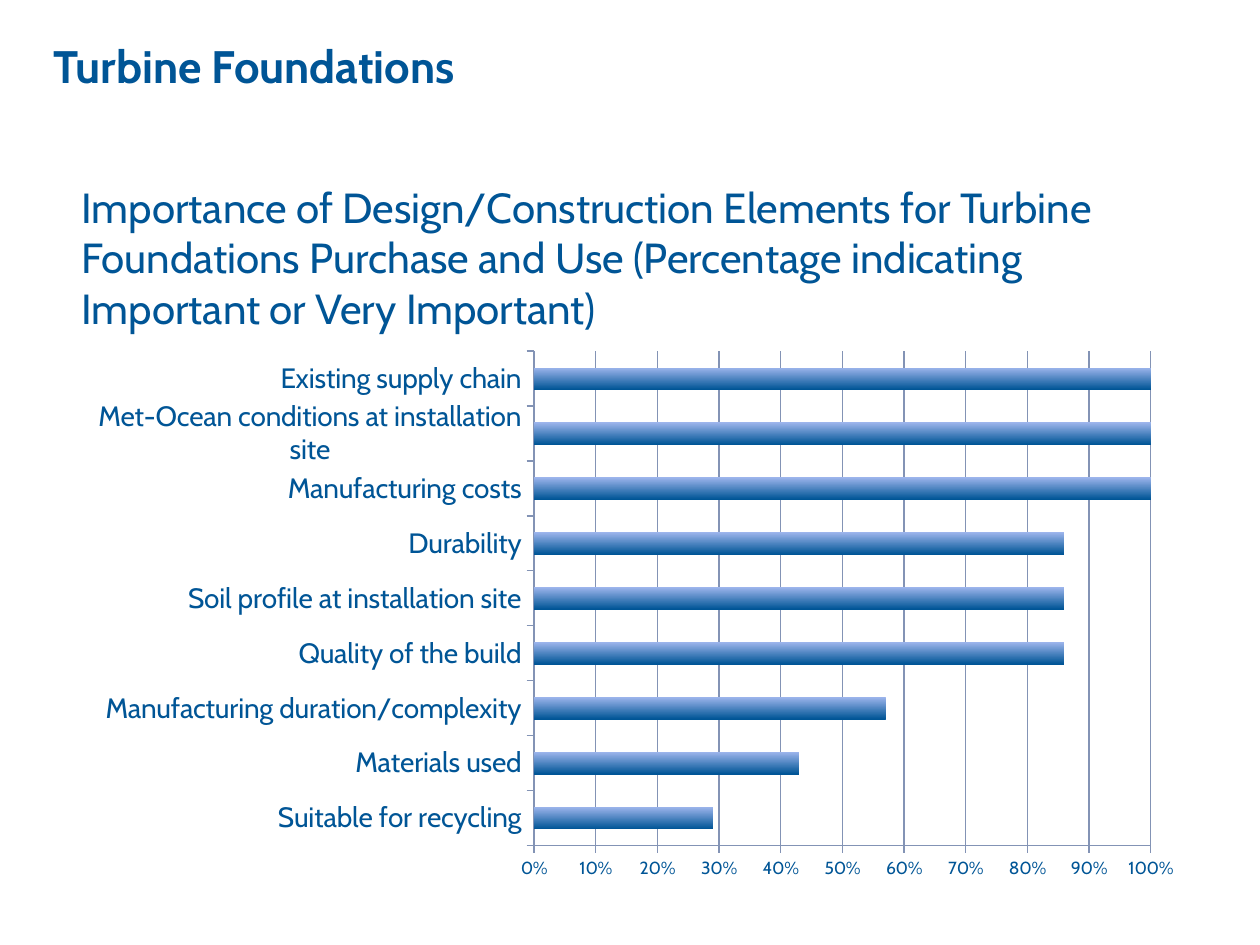
from lxml.etree import SubElement
from pptx import Presentation
from pptx.chart.data import CategoryChartData as ChartData
from pptx.dml.color import RGBColor
from pptx.enum.chart import XL_CHART_TYPE as ChartType, XL_TICK_MARK as Tick
from pptx.enum.text import MSO_ANCHOR as Anchor
from pptx.oxml.ns import qn
from pptx.util import Inches, Pt

NAVY = RGBColor(0x00, 0x55, 0x96)
SKY = RGBColor(0x9D, 0xB5, 0xEC)
GRID = RGBColor(0x83, 0x93, 0xB5)

IMPORTANCE = {
    "Suitable for recycling": 0.29,
    "Materials used": 0.43,
    "Manufacturing duration/complexity": 0.57,
    "Quality of the build": 0.86,
    "Soil profile at installation site": 0.86,
    "Durability": 0.86,
    "Manufacturing costs": 1,
    "Met-Ocean conditions at installation site": 1,
    "Existing supply chain": 1,
}
PLOT_AREA = {"x": 0.41, "y": 0.02, "w": 0.55, "h": 0.9}


def apply(target, values):
    for name, value in values.items():
        setattr(target, name, value)


class SlideBuilder:
    font_name = "Cabin"

    def __init__(self, slide):
        self.slide = slide

    def style_font(self, font, size, bold=False):
        apply(font, {"name": self.font_name, "size": Pt(size), "bold": bold})
        font.color.rgb = NAVY

    def text(self, box, wording, size, bold=False):
        frame = self.slide.shapes.add_textbox(*map(Inches, box)).text_frame
        apply(frame, {"word_wrap": True, "vertical_anchor": Anchor.TOP})
        line = frame.paragraphs[0].add_run()
        line.text = wording
        self.style_font(line.font, size, bold)

    def style_line(self, line):
        line.color.rgb = GRID
        line.width = Pt(0.75)

    def place_plot(self, chart, fractions):
        plot_area = chart._chartSpace.chart.plotArea
        layout = plot_area.find(qn("c:layout"))
        if layout is None:
            layout = SubElement(plot_area, qn("c:layout"))
            plot_area.insert(0, layout)
        manual = SubElement(layout, qn("c:manualLayout"))
        settings = {"layoutTarget": "inner", "xMode": "edge", "yMode": "edge", **fractions}
        for tag, value in settings.items():
            SubElement(manual, qn(f"c:{tag}")).set("val", str(value))

    def bar_chart(self, box, series_name, values):
        data = ChartData(number_format="0%")
        data.categories = list(values)
        data.add_series(series_name, list(values.values()))
        chart = self.slide.shapes.add_chart(
            ChartType.BAR_CLUSTERED, *map(Inches, box), data
        ).chart
        apply(chart, {"has_legend": False, "has_title": False})
        self.style_font(chart.font, 10)
        self.place_plot(chart, PLOT_AREA)

        apply(chart.plots[0], {"gap_width": 150, "vary_by_categories": False})
        bars = chart.plots[0].series[0].format.fill
        bars.gradient()
        bars.gradient_angle = 270
        for stop, color in zip(bars.gradient_stops, (SKY, NAVY)):
            stop.color.rgb = color

        ticks = {"major_tick_mark": Tick.OUTSIDE, "minor_tick_mark": Tick.NONE}
        elements, percent = chart.category_axis, chart.value_axis
        apply(elements, {**ticks, "has_major_gridlines": False})
        apply(percent, {
            **ticks,
            "minimum_scale": 0,
            "maximum_scale": 1,
            "major_unit": 0.1,
            "has_major_gridlines": True,
        })
        apply(percent.tick_labels, {"number_format": "0%", "number_format_is_linked": False})
        for axis, size in ((elements, 16), (percent, 10)):
            self.style_font(axis.tick_labels.font, size)
            self.style_line(axis.format.line)
        self.style_line(percent.major_gridlines.format.line)


def main():
    deck = Presentation()
    apply(deck, {"slide_width": Inches(10), "slide_height": Inches(7.5)})
    builder = SlideBuilder(deck.slides.add_slide(deck.slide_layouts[6]))
    builder.text((0.33, 0.25, 8.75, 0.65), "Turbine Foundations", 26, bold=True)
    builder.bar_chart((0.59, 2.7, 8.9, 4.36), "Series 1", IMPORTANCE)
    builder.text(
        (0.55, 1.39, 8.9, 1.31),
        "Importance of Design/Construction Elements for Turbine Foundations "
        "Purchase and Use (Percentage indicating Important or Very Important)",
        24,
    )
    deck.save("out.pptx")


if __name__ == "__main__":
    main()
